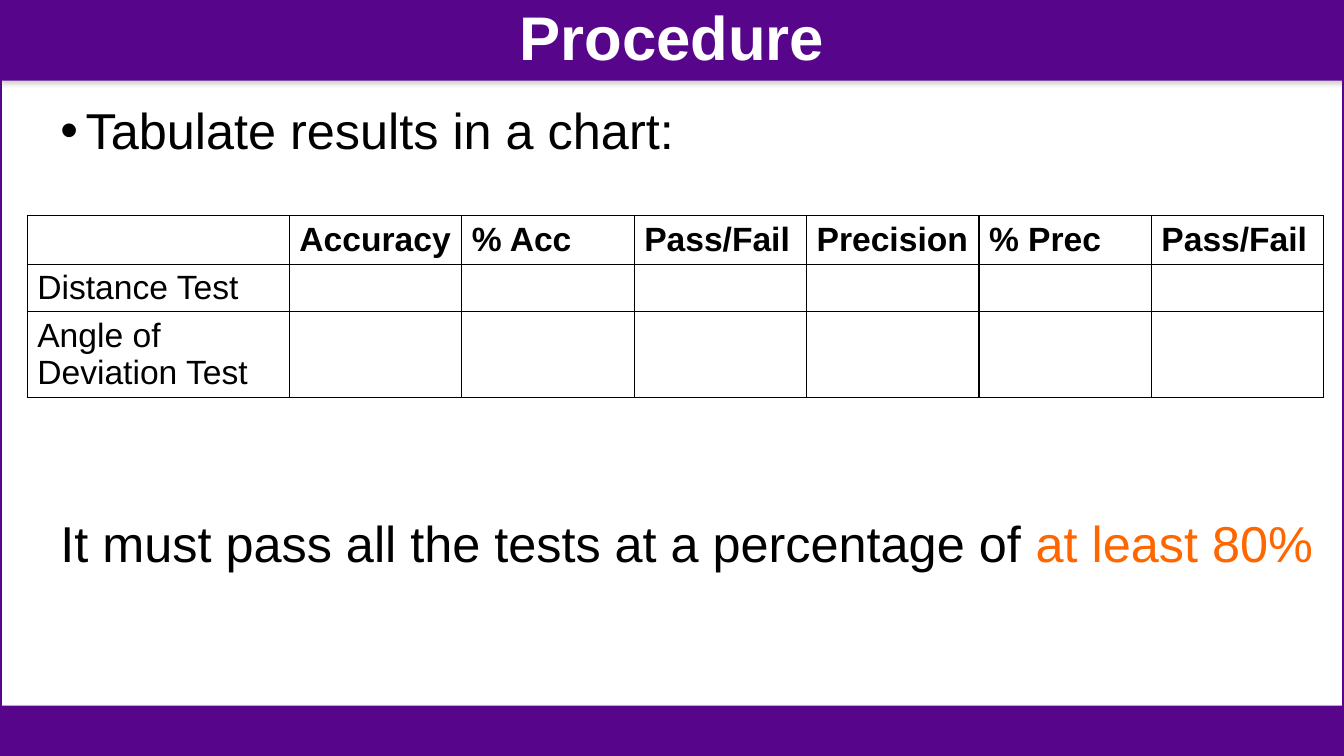
"""Build the Procedure slide with its empty results table."""
import pptx
import pptx.dml.color
import pptx.enum.shapes
import pptx.enum.text
import pptx.oxml
import pptx.oxml.ns
import pptx.util

TITLE = "Procedure"
LEAD = "Tabulate results in a chart:"
CLOSE = [("It must pass all the tests at a percentage of ", "000000"),
         ("at least 80%", "FF6600")]
GRID = [
    ["", "Accuracy", "% Acc", "Pass/Fail", "Precision", "% Prec", "Pass/Fail"],
    ["Distance Test"] + [""] * 6,
    ["Angle of Deviation Test"] + [""] * 6,
]
COLS = [2.6] + [1.71] * 6
ROWS = [0.48, 0.47, 0.85]
WIDE, HIGH = 13.33, 7.5
HEAD, FOOT = 0.8, 0.5
PURPLE = "57068C"
SPACE = 'xmlns:a="http://schemas.openxmlformats.org/drawingml/2006/main"'
SHADE = (f'<a:effectLst {SPACE}><a:outerShdw blurRad="39370" dist="22860" dir="5400000">'
         '<a:srgbClr val="808080"><a:alpha val="35000"/></a:srgbClr>'
         '</a:outerShdw></a:effectLst>')


def tint(code):
    return pptx.dml.color.RGBColor.from_string(code)


def style(item, form):
    for name, value in form.items():
        setattr(item, name, value)


def place(item, left, top, width, height):
    sides = zip(("left", "top", "width", "height"), (left, top, width, height))
    style(item, {name: pptx.util.Inches(size) for name, size in sides})


def write(para, text, code, size, bold=False):
    run = para.add_run()
    run.text = text
    style(run.font, {"name": "Arial", "size": pptx.util.Pt(size), "bold": bold})
    run.font.color.rgb = tint(code)


def add_box(slide, top, height, filled):
    box = slide.shapes.add_shape(pptx.enum.shapes.MSO_SHAPE.RECTANGLE, 0, 0, 0, 0)
    place(box, 0, top, WIDE, height)
    box.shadow.inherit = False
    if filled:
        box.fill.solid()
        box.fill.fore_color.rgb = tint(PURPLE)
        box.line.fill.background()
        props = box._element.spPr
        props.remove(props.find(pptx.oxml.ns.qn("a:effectLst")))
        props.append(pptx.oxml.parse_xml(SHADE))
    else:
        box.fill.background()
        box.line.color.rgb = tint(PURPLE)
        box.line.width = pptx.util.Pt(2.25)


def indent(para, left, hang, mark):
    props = para._p.get_or_add_pPr()
    props.set("marL", str(pptx.util.Inches(left)))
    props.set("indent", str(pptx.util.Inches(hang)))
    props.append(pptx.oxml.parse_xml(mark))


def add_grid(slide):
    frame = slide.shapes.add_table(len(ROWS), len(COLS), *map(
        pptx.util.Inches, (0.27, 2.14, sum(COLS), sum(ROWS))))
    table = frame.table
    style(table, {"first_row": False, "horz_banding": False})
    for col, width in zip(table.columns, COLS):
        col.width = pptx.util.Inches(width)
    for r, (row, height) in enumerate(zip(table.rows, ROWS)):
        row.height = pptx.util.Inches(height)
        for cell, text in zip(row.cells, GRID[r]):
            props = cell._tc.get_or_add_tcPr()
            for side in "LRTB":
                props.append(pptx.oxml.parse_xml(
                    f'<a:ln{side} {SPACE} w="12700"><a:solidFill>'
                    f'<a:srgbClr val="000000"/></a:solidFill></a:ln{side}>'))
            cell.fill.background()
            if text:
                write(cell.text_frame.paragraphs[0], text, "000000", 24, r == 0)


def main():
    deck = pptx.Presentation()
    style(deck, {"slide_width": pptx.util.Inches(WIDE),
                 "slide_height": pptx.util.Inches(HIGH)})
    slide = deck.slides.add_slide(deck.slide_layouts[1])
    title, body = slide.placeholders
    add_box(slide, 0, HEAD, True)
    add_box(slide, 0, HIGH, False)
    add_box(slide, HIGH - FOOT, FOOT, True)

    place(title, 0, 0, WIDE, HEAD)
    place(body, 0, 1, WIDE, 5.84)
    anchor = pptx.enum.text.MSO_ANCHOR
    for item, hold in ((title, anchor.MIDDLE), (body, anchor.TOP)):
        slide.shapes._spTree.append(item._element)
        style(item.text_frame, {"word_wrap": True, "vertical_anchor": hold,
                                "auto_size": pptx.enum.text.MSO_AUTO_SIZE.NONE})

    name = title.text_frame.paragraphs[0]
    style(name, {"alignment": pptx.enum.text.PP_ALIGN.CENTER, "line_spacing": 0.9})
    write(name, TITLE, "FFFFFF", 44, True)

    lead = body.text_frame.paragraphs[0]
    last = body.text_frame.add_paragraph()
    indent(lead, 0.75, -0.25, f'<a:buChar {SPACE} char="•"/>')
    indent(last, 0.5, 0, f'<a:buNone {SPACE}/>')
    for para, gap in ((lead, 0), (last, 256)):
        style(para, {"line_spacing": 0.9, "space_before": pptx.util.Pt(gap)})
    write(lead, LEAD, "000000", 36)
    for text, code in CLOSE:
        write(last, text, code, 36)

    add_grid(slide)
    deck.save("out.pptx")


if __name__ == "__main__":
    main()
